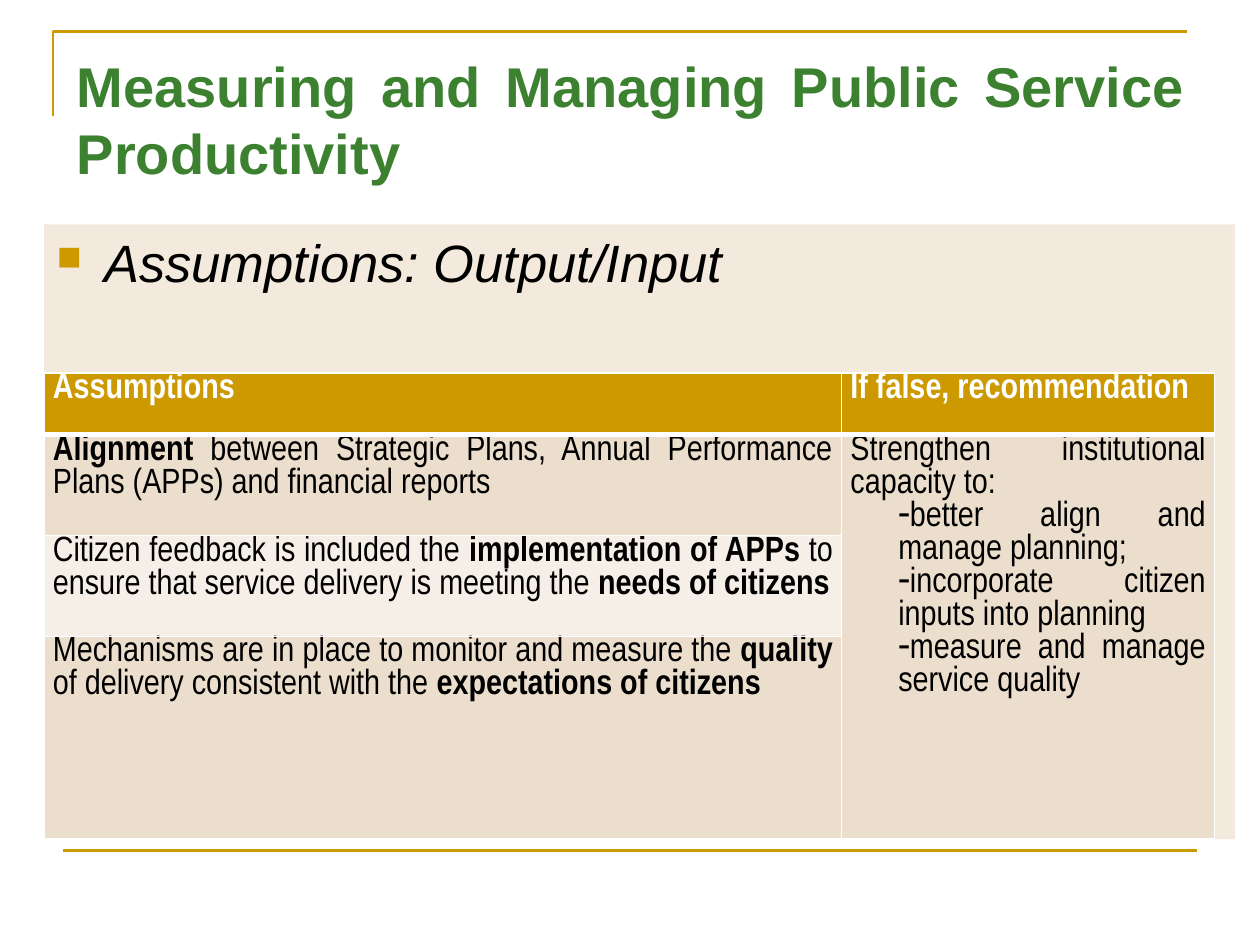
"""Build the slide on assumptions behind public service productivity."""
import lxml.etree
import pptx
import pptx.dml.color
import pptx.enum.shapes
import pptx.enum.text
import pptx.oxml.ns
import pptx.util

Inches = pptx.util.Inches
Pt = pptx.util.Pt
qn = pptx.oxml.ns.qn
JUSTIFY = pptx.enum.text.PP_ALIGN.JUSTIFY
LEFT = pptx.enum.text.PP_ALIGN.LEFT
TOP = pptx.enum.text.MSO_ANCHOR.TOP

THEME = {
    "gold": "CC9900", "green": "3B812F", "panel": "F3EADD", "band": "ECDECC",
    "light": "F6EFE7", "white": "FFFFFF", "black": "000000",
    "title_size": 32, "body_size": 30, "table_size": 20,
    "font": "Arial", "table_font": "Arial Narrow",
}


def color(name):
    return pptx.dml.color.RGBColor.from_string(THEME[name])


def write(paragraph, runs, font_format, color_name, alignment=JUSTIFY):
    paragraph.alignment = alignment
    for text, bold in runs:
        run = paragraph.add_run()
        run.text = text
        for name, value in {**font_format, "bold": bold}.items():
            setattr(run.font, name, value)
        run.font.color.rgb = color(color_name)


presentation = pptx.Presentation()
presentation.slide_width, presentation.slide_height = Inches(10), Inches(7.5)
slide = presentation.slides.add_slide(presentation.slide_layouts[5])

builder = slide.shapes.build_freeform(Inches(0.42), Inches(0.92))
builder.add_line_segments([(Inches(0.42), Inches(0.25)), (Inches(9.42), Inches(0.25))], close=False)
corner = builder.convert_to_shape()
corner.fill.background()
corner.shadow.inherit = False

footer_rule = slide.shapes.add_connector(
    pptx.enum.shapes.MSO_CONNECTOR.STRAIGHT, Inches(0.5), Inches(6.75), Inches(9.5), Inches(6.75))
lxml.etree.SubElement(footer_rule._element.spPr, qn("a:effectLst"))
for rule in (corner, footer_rule):
    rule.line.color.rgb = color("gold")
    rule.line.width = Pt(1.5)

title = slide.shapes.title
title_place = {"left": 0.51, "top": 0.36, "width": 9, "height": 1.02}
for name, value in title_place.items():
    setattr(title, name, Inches(value))
title_frame = {"vertical_anchor": TOP, "word_wrap": True, "margin_top": Inches(0.05),
               "auto_size": pptx.enum.text.MSO_AUTO_SIZE.NONE}
for name, value in title_frame.items():
    setattr(title.text_frame, name, value)
write(title.text_frame.paragraphs[0],
      [("Measuring and Managing Public Service Productivity", True)],
      {"name": THEME["font"], "size": Pt(THEME["title_size"])}, "green")

panel = slide.shapes.add_shape(pptx.enum.shapes.MSO_SHAPE.RECTANGLE,
                               Inches(0.35), Inches(1.78), Inches(9.45), Inches(4.88))
panel.shadow.inherit = False
panel.fill.solid()
panel.fill.fore_color.rgb = color("panel")
panel.line.fill.background()
panel.text_frame.vertical_anchor = TOP
panel.text_frame.margin_top = Inches(0.05)
heading = panel.text_frame.paragraphs[0]
write(heading, [("Assumptions: Output/Input", False)],
      {"name": THEME["font"], "size": Pt(THEME["body_size"]), "italic": True}, "black", LEFT)
properties = heading._p.get_or_add_pPr()
properties.set("marL", str(Inches(0.38)))
properties.set("indent", str(-Inches(0.38)))
bullet_color = lxml.etree.SubElement(properties, qn("a:buClr"))
lxml.etree.SubElement(bullet_color, qn("a:srgbClr"), val=THEME["gold"])
lxml.etree.SubElement(properties, qn("a:buSzPct"), val="65000")
lxml.etree.SubElement(properties, qn("a:buChar"), char="■")

cells = {
    (0, 0): [[("Assumptions", True)]],
    (0, 1): [[("If false, recommendation", True)]],
    (1, 0): [[("Alignment", True),
              (" between Strategic Plans, Annual Performance Plans (APPs) and financial reports", False)]],
    (1, 1): [[("Strengthen institutional capacity to:", False)],
             [("better align and manage planning; ", False)],
             [("incorporate citizen inputs into planning ", False)],
             [("measure and manage service quality", False)]],
    (2, 0): [[("Citizen feedback is included the ", False), ("implementation of APPs ", True),
              ("to ensure that service delivery is meeting the ", False), ("needs of citizens", True)]],
    (3, 0): [[("Mechanisms are in place to monitor and measure the ", False), ("quality ", True),
              ("of delivery consistent with the ", False), ("expectations of citizens", True)]],
}
row_fills = ["gold", "band", "light", "band"]
table = slide.shapes.add_table(4, 2, Inches(0.35), Inches(2.96), Inches(9.29), Inches(3.7)).table
for column, width in zip(table.columns, [6.33, 2.96]):
    column.width = Inches(width)
for row, height in zip(table.rows, [0.49, 0.8, 0.8, 1.61]):
    row.height = Inches(height)
table.cell(1, 1).merge(table.cell(3, 1))

cell_format = {"margin_left": Inches(0.07), "margin_right": Inches(0.07),
               "margin_top": 0, "margin_bottom": 0, "vertical_anchor": TOP}
table_font = {"name": THEME["table_font"], "size": Pt(THEME["table_size"])}
for (row, column), paragraphs in cells.items():
    cell = table.cell(row, column)
    for name, value in cell_format.items():
        setattr(cell, name, value)
    cell_properties = cell._tc.get_or_add_tcPr()
    border_widths = {"L": 1, "R": 1, "T": 3 if row == 1 else 1, "B": 3 if row == 0 else 1}
    for side, width in border_widths.items():
        border = lxml.etree.SubElement(cell_properties, qn(f"a:ln{side}"), w=str(Pt(width)))
        border_fill = lxml.etree.SubElement(border, qn("a:solidFill"))
        lxml.etree.SubElement(border_fill, qn("a:srgbClr"), val=THEME["white"])
    cell.fill.solid()
    cell.fill.fore_color.rgb = color(row_fills[row])
    for index, runs in enumerate(paragraphs):
        paragraph = cell.text_frame.add_paragraph() if index else cell.text_frame.paragraphs[0]
        paragraph.line_spacing = 1.0
        write(paragraph, runs, table_font, "black" if row else "white")
        if index:
            properties = paragraph._p.get_or_add_pPr()
            properties.set("marL", str(Inches(0.38)))
            properties.set("indent", "0")
            lxml.etree.SubElement(properties, qn("a:buChar"), char="-")

presentation.save("out.pptx")
